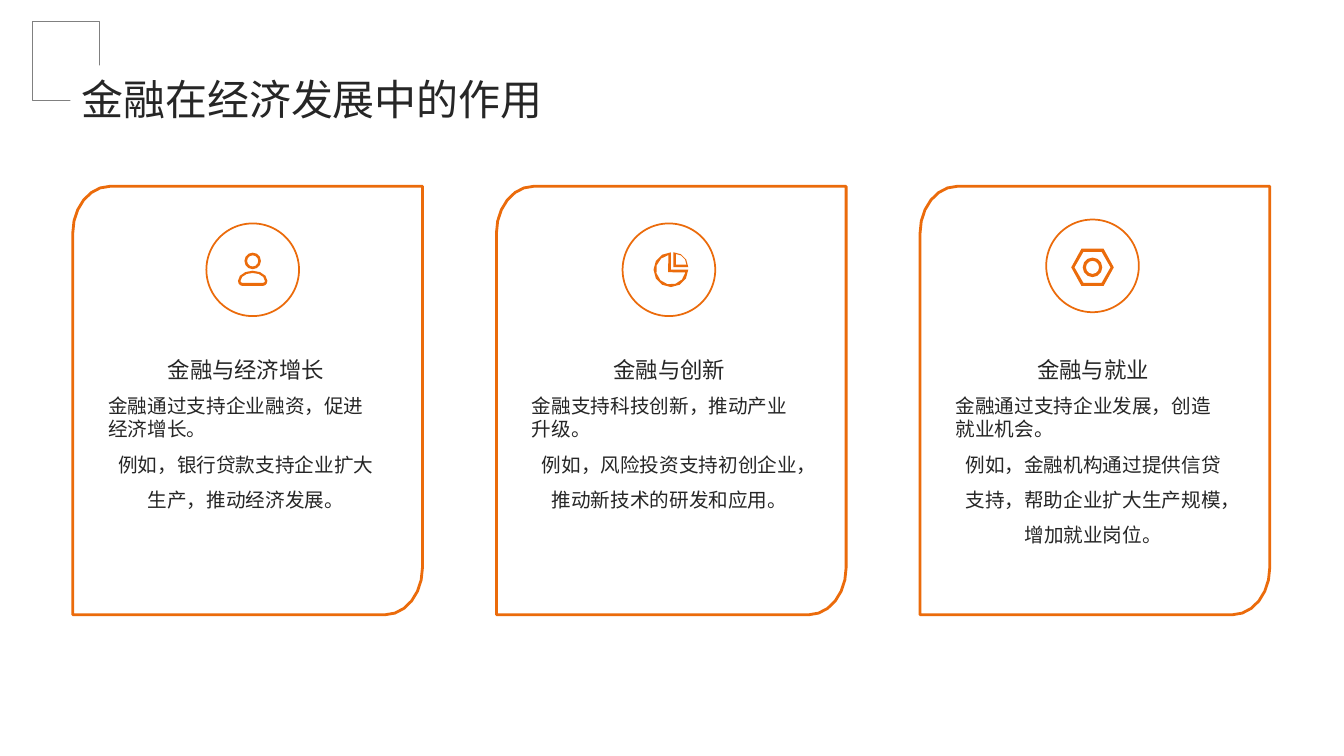
import math

import lxml.etree
import pptx
import pptx.dml.color
import pptx.enum.shapes
import pptx.enum.text
import pptx.oxml.ns
import pptx.util

Pt = pptx.util.Pt
SHAPE = pptx.enum.shapes.MSO_SHAPE
ALIGN = pptx.enum.text.PP_ALIGN
ANCHOR = pptx.enum.text.MSO_ANCHOR
COLORS = {"orange": "EB6B0B", "text": "262626", "gray": "808080", "white": "FFFFFF"}
FONT = "Noto Sans CJK SC"

# Card grid
LEFT, TOP, WIDE, HIGH, STEP = 52, 133.1, 249.8, 306, 302.6
DISC = 66.2

# Heading, body, disc centre (from card left, from slide top), icon name
CARDS = [
    ("金融与经济增长", "金融通过支持企业融资，促进经济增长。",
     "例如，银行贷款支持企业扩大生产，推动经济发展。", 128.5, 192.7, "person"),
    ("金融与创新", "金融支持科技创新，推动产业升级。",
     "例如，风险投资支持初创企业，推动新技术的研发和应用。", 123.2, 192.7, "pie"),
    ("金融与就业", "金融通过支持企业发展，创造就业机会。",
     "例如，金融机构通过提供信贷支持，帮助企业扩大生产规模，增加就业岗位。",
     123.2, 189.9, "nut"),
]


def color(name):
    return pptx.dml.color.RGBColor.from_string(COLORS[name])


def paint(shape, fill=None, line=None, width=0):
    shape.shadow.inherit = False
    if fill:
        shape.fill.solid()
        shape.fill.fore_color.rgb = color(fill)
    else:
        shape.fill.background()
    if line:
        shape.line.color.rgb = color(line)
        shape.line.width = Pt(width)
    else:
        shape.line.fill.background()


def add_preset(slide, kind, box, **style):
    paint(slide.shapes.add_shape(kind, *map(Pt, box)), **style)


def arc(x, y, rx, ry, start=0, end=360, step=30):
    """Points along an ellipse, clockwise, angles in degrees."""
    count = round((end - start) / step)
    angles = [math.radians(start + (end - start) * i / count) for i in range(count + 1)]
    return [(x + rx * math.cos(a), y + ry * math.sin(a)) for a in angles]


def add_outline(slide, loops, x, y, **style):
    """Draw closed loops of points, placed relative to x, y."""
    loops = [[(Pt(x + px), Pt(y + py)) for px, py in loop] for loop in loops]
    pen = slide.shapes.build_freeform(*loops[0][0])
    for i, loop in enumerate(loops):
        if i:
            pen.move_to(*loop[0])
        pen.add_line_segments(loop[1:], close=True)
    paint(pen.convert_to_shape(), **style)


def add_run(para, text, size):
    run = para.add_run()
    run.text = text
    run.font.size = Pt(size)
    run.font.name = FONT
    run.font.color.rgb = color("text")
    # East Asian typeface
    tag = pptx.oxml.ns.qn("a:ea")
    face = lxml.etree.Element(tag, typeface=FONT)
    run.font._element.find(pptx.oxml.ns.qn("a:latin")).addnext(face)


def fill_text(shape, items, size, anchor=ANCHOR.TOP):
    """Items are (text, alignment, line spacing), one per paragraph."""
    frame = shape.text_frame
    frame.word_wrap = True
    frame.auto_size = pptx.enum.text.MSO_AUTO_SIZE.NONE
    frame.vertical_anchor = anchor
    frame.margin_left = frame.margin_right = frame.margin_top = frame.margin_bottom = 0
    for i, (text, align, space) in enumerate(items):
        para = frame.add_paragraph() if i else frame.paragraphs[0]
        para.alignment = align
        para.line_spacing = space
        para.space_before = Pt(0)
        add_run(para, text, size)


def add_text(slide, box, items, size, anchor=ANCHOR.TOP):
    fill_text(slide.shapes.add_textbox(*map(Pt, box)), items, size, anchor)


def bust(rx, ry, cx, cy):
    """Shoulders with rounded lower corners."""
    return (arc(0, 7.9, rx, ry, 180, 360) + arc(7.5, 7.9, cx, cy, 30, 90)
            + arc(-7.5, 7.9, cx, cy, 90, 150))


def hexagon(half, tip, high):
    return [(-half, -high), (half, -high), (tip, 0), (half, high), (-half, high), (-tip, 0)]


def ring(y, outer, inner):
    return [arc(0, y, r, r, 0, 330) for r in (outer, inner)]


def get_icon(name):
    """Icon loops around the disc centre."""
    if name == "person":
        return ring(-6.3, 5.9, 4) + [bust(10.5, 7.2, 3, 3.6), bust(8.7, 5.6, 1.3, 1.4)]
    if name == "pie":
        return [
            arc(1.4, 0, 12.4, 12.4, 0, 270) + [(1.4, 0)],
            arc(1.4, 0, 10.6, 10.6, 10, 260) + [(-0.5, 1.8)],
            arc(3.2, -1.9, 10.6, 10.6, 270, 360) + [(3.2, -1.9)],
            arc(5, -3.7, 7.5, 7.5, 270, 360) + [(5, -3.7)],
        ]
    nut = [hexagon(7.9, 15.2, 13.3), hexagon(6.5, 12.9, 11.1)] + ring(0, 7, 4.7)
    return [[(x, y + 1.1) for x, y in loop] for loop in nut]


def add_card(slide, left, head, lead, more, mid, row, icon):
    # Frame with two rounded corners
    rx, ry = 26.5, 33.5
    frame = (arc(rx, ry, rx, ry, 180, 270, 15) + [(WIDE, 0)]
             + arc(WIDE - rx, HIGH - ry, rx, ry, 0, 90, 15) + [(0, HIGH)])
    add_outline(slide, [frame], left, TOP, fill="white", line="orange", width=2)
    # Disc and icon
    x = left + mid
    add_preset(slide, SHAPE.OVAL, (x - DISC / 2, row - DISC / 2, DISC, DISC),
               line="orange", width=1.25)
    add_outline(slide, get_icon(icon), x, row, fill="orange")
    # Words
    inset, width = left + 25.4, 196.5
    add_text(slide, (inset, 237.6, width, 36), [(head, ALIGN.CENTER, 1.3)], 16, ANCHOR.BOTTOM)
    add_text(slide, (inset, 281.3, width, 124.6),
             [(lead, ALIGN.LEFT, 1.0), (more, ALIGN.CENTER, 1.5)], 14)


def add_title(slide, text):
    # Corner ornament
    add_preset(slide, SHAPE.RECTANGLE, (23, 15.2, 48.2, 56.4), line="gray", width=0.75)
    add_preset(slide, SHAPE.RECTANGLE, (50.2, 46.8, 43.9, 36), fill="white")
    # Title, brought to the front
    title = slide.shapes.title
    title.left, title.top, title.width, title.height = map(Pt, (57.9, 49, 799.2, 33.1))
    fill_text(title, [(text, ALIGN.LEFT, 1.1)], 30)
    title.element.getparent().append(title.element)


def main():
    deck = pptx.Presentation()
    deck.slide_width, deck.slide_height = Pt(960), Pt(540)
    slide = deck.slides.add_slide(deck.slide_layouts[5])
    for i, card in enumerate(CARDS):
        add_card(slide, LEFT + i * STEP, *card)
    add_title(slide, "金融在经济发展中的作用")
    deck.save("out.pptx")


if __name__ == "__main__":
    main()
